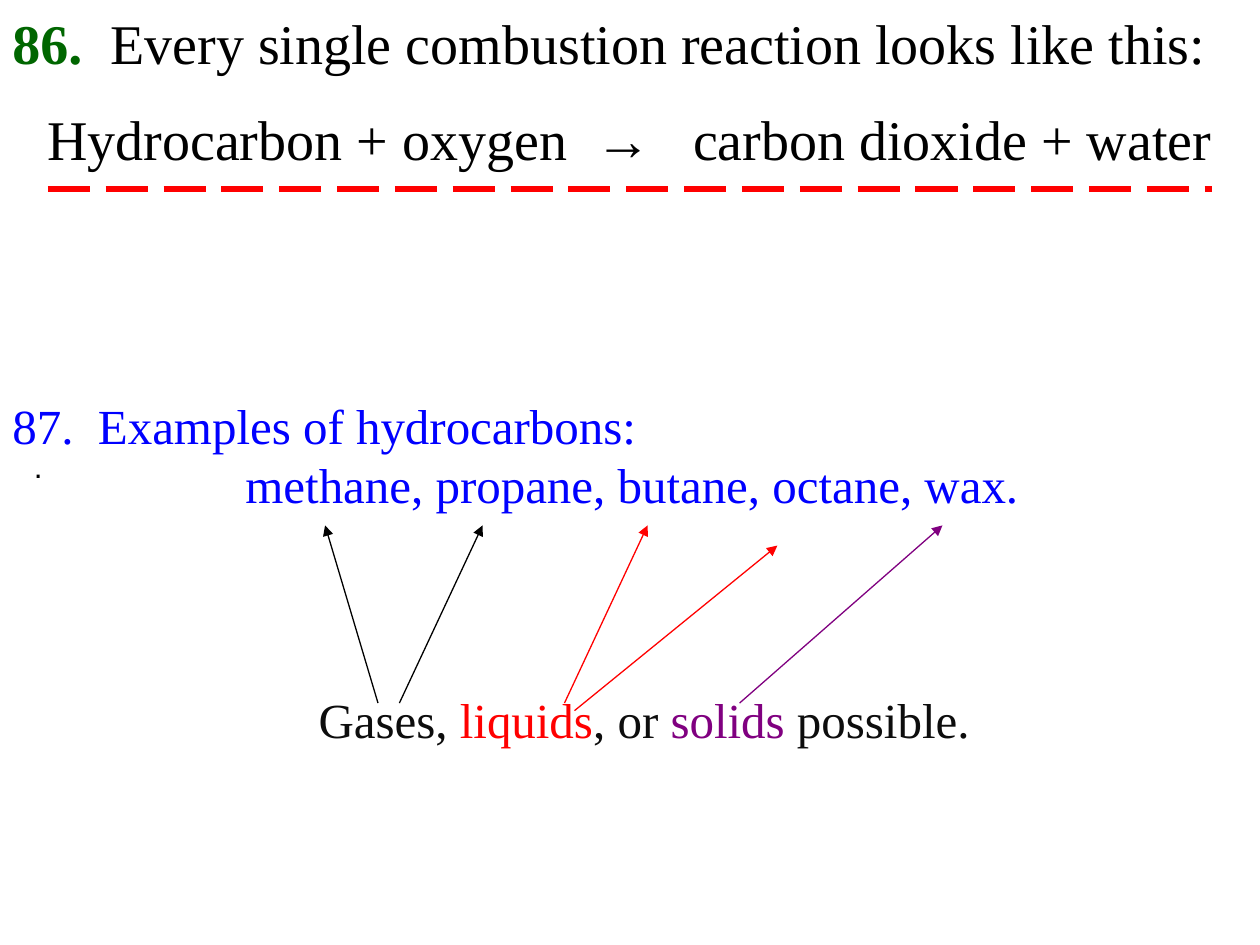
from pptx import Presentation
from pptx.dml.color import RGBColor
from pptx.enum.dml import MSO_LINE
from pptx.enum.shapes import MSO_CONNECTOR
from pptx.enum.text import MSO_AUTO_SIZE, PP_ALIGN
from pptx.oxml.ns import qn
from pptx.util import Inches, Pt
from lxml.etree import SubElement

BLACK = RGBColor(0x00, 0x00, 0x00)
CHARCOAL = RGBColor(0x0D, 0x0D, 0x0D)
GREEN = RGBColor(0x00, 0x66, 0x00)
BLUE = RGBColor(0x00, 0x00, 0xFF)
RED = RGBColor(0xFF, 0x00, 0x00)
PURPLE = RGBColor(0x80, 0x00, 0x80)
SERIF = "Times New Roman"


def add_text_box(slide, left, top, width, height, margin_top=0.05):
    box = slide.shapes.add_textbox(Inches(left), Inches(top), Inches(width), Inches(height))
    frame = box.text_frame
    frame.word_wrap = True
    frame.auto_size = MSO_AUTO_SIZE.SHAPE_TO_FIT_TEXT
    frame.margin_top = Inches(margin_top)
    return frame


def write(paragraph, text, size=28, color=BLACK, font=SERIF, bold=False):
    run = paragraph.add_run()
    run.text = text
    run.font.size = Pt(size)
    run.font.name = font
    run.font.bold = bold
    run.font.color.rgb = color


def set_layout(paragraph, size, before=0, indent=0, alignment=PP_ALIGN.LEFT):
    """Space a line of text at 1.2 times its size, with the gap before it in points."""
    paragraph.line_spacing = Pt(1.2 * size)
    paragraph.space_before = Pt(before)
    paragraph.alignment = alignment
    paragraph._p.get_or_add_pPr().set("marL", str(Inches(indent)))


def add_line(slide, start, end, color, width=0.75, dash=None, arrow=False):
    line = slide.shapes.add_connector(
        MSO_CONNECTOR.STRAIGHT, *(Inches(value) for value in start + end))
    line.line.color.rgb = color
    line.line.width = Pt(width)
    if dash:
        line.line.dash_style = dash
    if arrow:
        SubElement(line.line._get_or_add_ln(), qn("a:tailEnd"), type="triangle")
    SubElement(line._element.spPr, qn("a:effectLst"))


def add_notes_text(slide, left, top, width, height):
    frame = add_text_box(slide, left, top, width, height, margin_top=0.07)
    heading = frame.paragraphs[0]
    set_layout(heading, 32)
    write(heading, "86.", size=32, color=GREEN, bold=True)
    write(heading, "  Every single combustion reaction looks like this:", size=32)

    equation = frame.add_paragraph()
    set_layout(equation, 32, before=16, alignment=PP_ALIGN.CENTER)
    write(equation, "Hydrocarbon + oxygen  →   carbon dioxide + water", size=32)

    examples = frame.add_paragraph()
    set_layout(examples, 28, before=128)
    write(examples, "87.  Examples of hydrocarbons:", color=BLUE)

    names = frame.add_paragraph()
    set_layout(names, 28, indent=1.85)
    write(names, "methane, propane, butane, octane, wax.", color=BLUE)

    states = frame.add_paragraph()
    set_layout(states, 28, before=101, indent=2.43)
    for text, color in (("Gases, ", CHARCOAL), ("liquids", RED), (", or ", CHARCOAL),
                        ("solids", PURPLE), (" possible.", CHARCOAL)):
        write(states, text, color=color)


def add_dot(slide, left, top, width, height):
    frame = add_text_box(slide, left, top, width, height)
    write(frame.paragraphs[0], ".", size=18, font="Arial")


def add_state_arrows(slide, left, top, width, height):
    """Point from each state of matter up to its hydrocarbons."""
    bottom = top + height
    arrows = (
        (0.42, 0, 0, 0, BLACK),
        (0.59, 0, 1.25, 0, BLACK),
        (1.9, 0, 2.56, 0, RED),
        (1.98, 0.06, 3.59, 0.16, RED),
        (3.29, 0, width, 0, PURPLE),
    )
    for start_x, start_drop, end_x, end_drop, color in arrows:
        add_line(slide, (left + start_x, bottom + start_drop),
                 (left + end_x, top + end_drop), color, arrow=True)


def main():
    presentation = Presentation()
    presentation.slide_width = Inches(10)
    presentation.slide_height = Inches(7.5)
    slide = presentation.slides.add_slide(presentation.slide_layouts[6])
    add_notes_text(slide, 0, 0, 10, 6.58)
    add_dot(slide, 0.17, 3.5, 10, 0.4)
    add_line(slide, (0.38, 1.5), (9.62, 1.5), RED, width=3, dash=MSO_LINE.LONG_DASH)
    add_state_arrows(slide, 2.58, 4.17, 4.9, 1.41)
    presentation.save("out.pptx")


if __name__ == "__main__":
    main()
